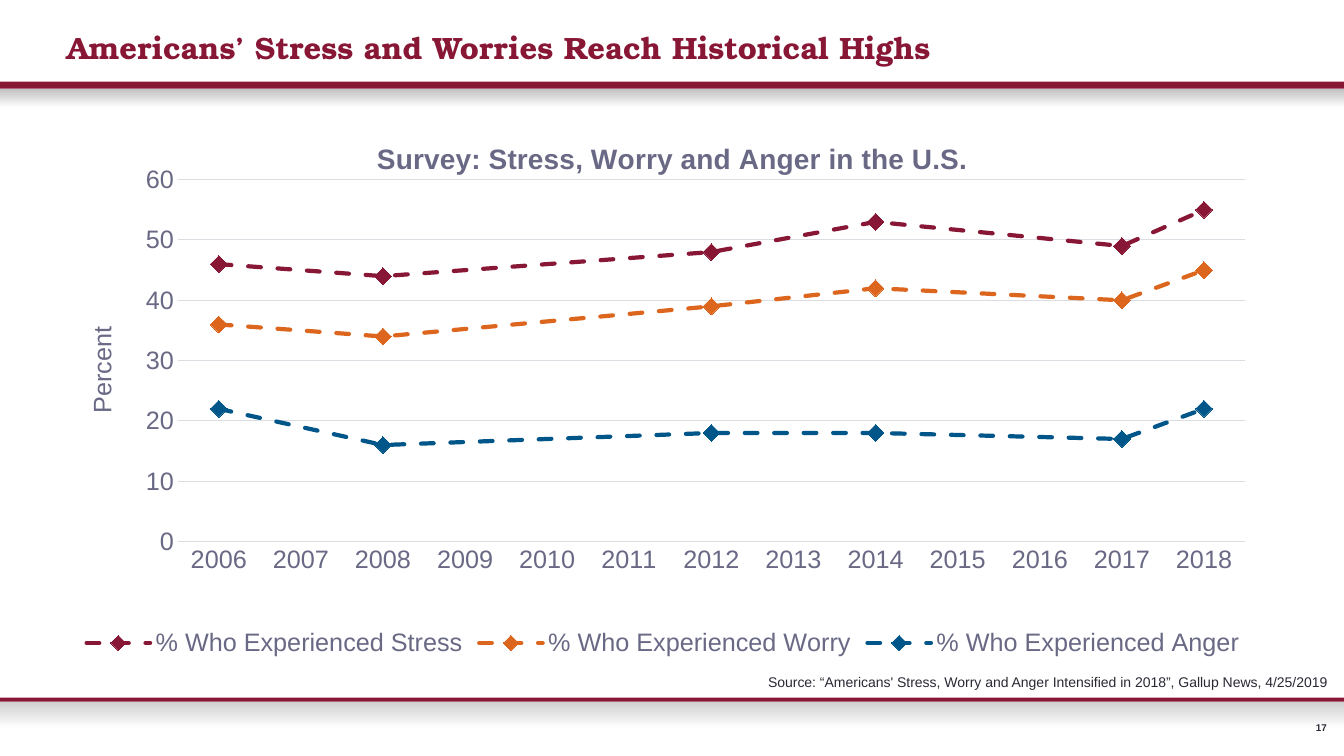
from dataclasses import dataclass

from lxml.etree import SubElement
from pptx import Presentation
from pptx.chart.data import CategoryChartData
from pptx.dml.color import RGBColor
from pptx.enum.chart import XL_CHART_TYPE, XL_LEGEND_POSITION, XL_MARKER_STYLE, XL_TICK_MARK
from pptx.enum.dml import MSO_LINE
from pptx.enum.shapes import MSO_SHAPE
from pptx.enum.text import MSO_ANCHOR, MSO_AUTO_SIZE, PP_ALIGN
from pptx.oxml.ns import qn
from pptx.util import Inches, Pt


@dataclass(frozen=True)
class Theme:
    red: str = "881635"
    orange: str = "DC661D"
    blue: str = "005689"
    ink: str = "292934"
    slate: str = "696986"
    grid: str = "DCDCE3"
    gray: str = "C0C0C0"
    pale: str = "CFCFCF"
    white: str = "FFFFFF"
    head: str = "TeX Gyre Bonum"
    body: str = "Arial"
    title: int = 22
    chart: int = 20
    label: int = 18
    note: int = 10
    page: int = 7


def apply(item, values):
    for name, value in values.items():
        setattr(item, name, value)


def paint(font, size, color, name, bold=False):
    apply(font, {"size": Pt(size), "name": name, "bold": bold})
    font.color.rgb = RGBColor.from_string(color)


def stroke(line, color, width, dash=None):
    line.color.rgb = RGBColor.from_string(color)
    apply(line, {"width": Pt(width), "dash_style": dash})


def layout(owner, **marks):
    old = owner.find(qn("c:layout"))
    if old is not None:
        owner.remove(old)
    node = SubElement(owner, qn("c:layout"))
    manual = SubElement(node, qn("c:manualLayout"))
    for name, value in marks.items():
        SubElement(manual, qn(f"c:{name}")).set("val", str(value))
    owner.insert(0 if owner.find(qn("c:tx")) is None else 1, node)


class Deck:
    def __init__(self, theme):
        self.theme = theme
        self.file = Presentation()
        apply(self.file, {"slide_width": Inches(13.33), "slide_height": Inches(7.5)})
        self.slide = self.file.slides.add_slide(self.file.slide_layouts[5])

    def place(self, left, top, width, height):
        wide, high = self.file.slide_width, self.file.slide_height
        shares = (left, wide), (top, high), (width, wide), (height, high)
        return [int(share * full / 100) for share, full in shares]

    def band(self, top, height, *colors):
        box = self.slide.shapes.add_shape(MSO_SHAPE.RECTANGLE, *self.place(0, top, 100, height))
        box.shadow.inherit = False
        box.line.fill.background()
        if len(colors) == 1:
            box.fill.solid()
            box.fill.fore_color.rgb = RGBColor.from_string(colors[0])
            return
        box.fill.gradient()
        box.fill.gradient_angle = 270
        for stop, color in zip(box.fill.gradient_stops, colors):
            stop.color.rgb = RGBColor.from_string(color)

    def letter(self, box, text, font, align=PP_ALIGN.LEFT, **frame):
        apply(box.text_frame, {"text": text, "auto_size": MSO_AUTO_SIZE.SHAPE_TO_FIT_TEXT, **frame})
        line = box.text_frame.paragraphs[0]
        line.alignment = align
        paint(line.runs[0].font, *font)

    def title(self, text, *area):
        box = self.slide.shapes.title
        apply(box, dict(zip(("left", "top", "width", "height"), self.place(*area))))
        font = self.theme.title, self.theme.red, self.theme.head, True
        self.letter(box, text, font, word_wrap=True, vertical_anchor=MSO_ANCHOR.MIDDLE)

    def text(self, text, area, font, align=PP_ALIGN.LEFT, **frame):
        box = self.slide.shapes.add_textbox(*self.place(*area))
        self.letter(box, text, font, align, word_wrap=False, **frame)

    def label(self, title, text, size, bold, left, top):
        title.text_frame.text = text
        font = title.text_frame.paragraphs[0].runs[0].font
        paint(font, size, self.theme.slate, self.theme.body, bold)
        layout(title.element, xMode="edge", yMode="edge", x=left, y=top)

    def axis(self, axis):
        apply(axis, {"major_tick_mark": XL_TICK_MARK.NONE, "minor_tick_mark": XL_TICK_MARK.NONE})
        paint(axis.tick_labels.font, self.theme.label, self.theme.slate, self.theme.body)

    def chart(self, heading, unit, years, rows, area):
        theme = self.theme
        data = CategoryChartData()
        data.categories = years
        for name, points, _ in rows:
            data.add_series(name, [points.get(year) for year in years])
        kind = XL_CHART_TYPE.LINE_MARKERS
        chart = self.slide.shapes.add_chart(kind, *self.place(*area), data).chart
        paint(chart.font, theme.note, theme.ink, theme.body)
        apply(chart, {"has_title": True, "has_legend": True})
        self.label(chart.chart_title, heading, theme.chart, True, 0.26, 0.04)
        apply(chart.legend, {"position": XL_LEGEND_POSITION.BOTTOM, "include_in_layout": False})
        paint(chart.legend.font, theme.label, theme.slate, theme.body)

        base, side = chart.category_axis, chart.value_axis
        self.axis(base)
        self.axis(side)
        stroke(base.format.line, theme.grid, 0.75)
        side.format.line.fill.background()
        apply(side, {"minimum_scale": 0, "maximum_scale": 60, "major_unit": 10,
                     "has_major_gridlines": True, "has_title": True})
        stroke(side.major_gridlines.format.line, theme.grid, 0.75)
        self.label(side.axis_title, unit, theme.label, False, 0.02, 0.38)
        frame = side.axis_title.element.find(".//" + qn("a:bodyPr"))
        frame.set("rot", "-5400000")
        frame.set("vert", "horz")

        plot = chart.plots[0]
        plot.vary_by_categories = False
        for series, (_, _, color) in zip(plot.series, rows):
            series.smooth = False
            stroke(series.format.line, color, 3, MSO_LINE.DASH)
            mark = series.marker
            apply(mark, {"style": XL_MARKER_STYLE.DIAMOND, "size": 12})
            mark.format.fill.solid()
            mark.format.fill.fore_color.rgb = RGBColor.from_string(color)
            stroke(mark.format.line, color, 0.75)
        for node in chart.element.iter(qn("c:ser")):
            node.find(qn("c:spPr")).find(qn("a:ln")).set("cap", "rnd")
        root = chart.element.find(qn("c:chart"))
        root.find(qn("c:dispBlanksAs")).set("val", "span")
        layout(root.find(qn("c:plotArea")), layoutTarget="inner", xMode="edge", yMode="edge",
               x=0.1, y=0.12, w=0.88, h=0.66)


def main():
    theme = Theme()
    deck = Deck(theme)
    deck.band(92.8, 3.6, theme.pale, theme.white)
    deck.band(11.73, 2.53, theme.gray, theme.white)
    deck.band(92.27, 0.53, theme.red)
    deck.band(10.8, 0.93, theme.red)
    deck.title("Americans’ Stress and Worries Reach Historical Highs", 4.2, 3.07, 90, 6.27)

    years = [str(year) for year in range(2006, 2019)]
    polls = "2006", "2008", "2012", "2014", "2017", "2018"
    moods = (
        ("Stress", (46, 44, 48, 53, 49, 55), theme.red),
        ("Worry", (36, 34, 39, 42, 40, 45), theme.orange),
        ("Anger", (22, 16, 18, 18, 17, 22), theme.blue),
    )
    rows = [(f"% Who Experienced {mood}", dict(zip(polls, points)), color)
            for mood, points, color in moods]
    deck.chart("Survey: Stress, Worry and Anger in the U.S.", "Percent", years, rows,
               (4.2, 15.07, 90.25, 72.53))

    deck.text("Source: “Americans' Stress, Worry and Anger Intensified in 2018”, Gallup News, 4/25/2019",
              (56.41, 88.4, 43.51, 3.6), (theme.note, theme.ink, theme.body))
    inset = dict.fromkeys(("margin_left", "margin_top", "margin_right", "margin_bottom"), 0)
    deck.text("17", (97.82, 95.47, 0.9, 1.6), (theme.page, theme.ink, theme.body, True),
              PP_ALIGN.RIGHT, vertical_anchor=MSO_ANCHOR.MIDDLE, **inset)
    deck.file.save("out.pptx")


if __name__ == "__main__":
    main()
